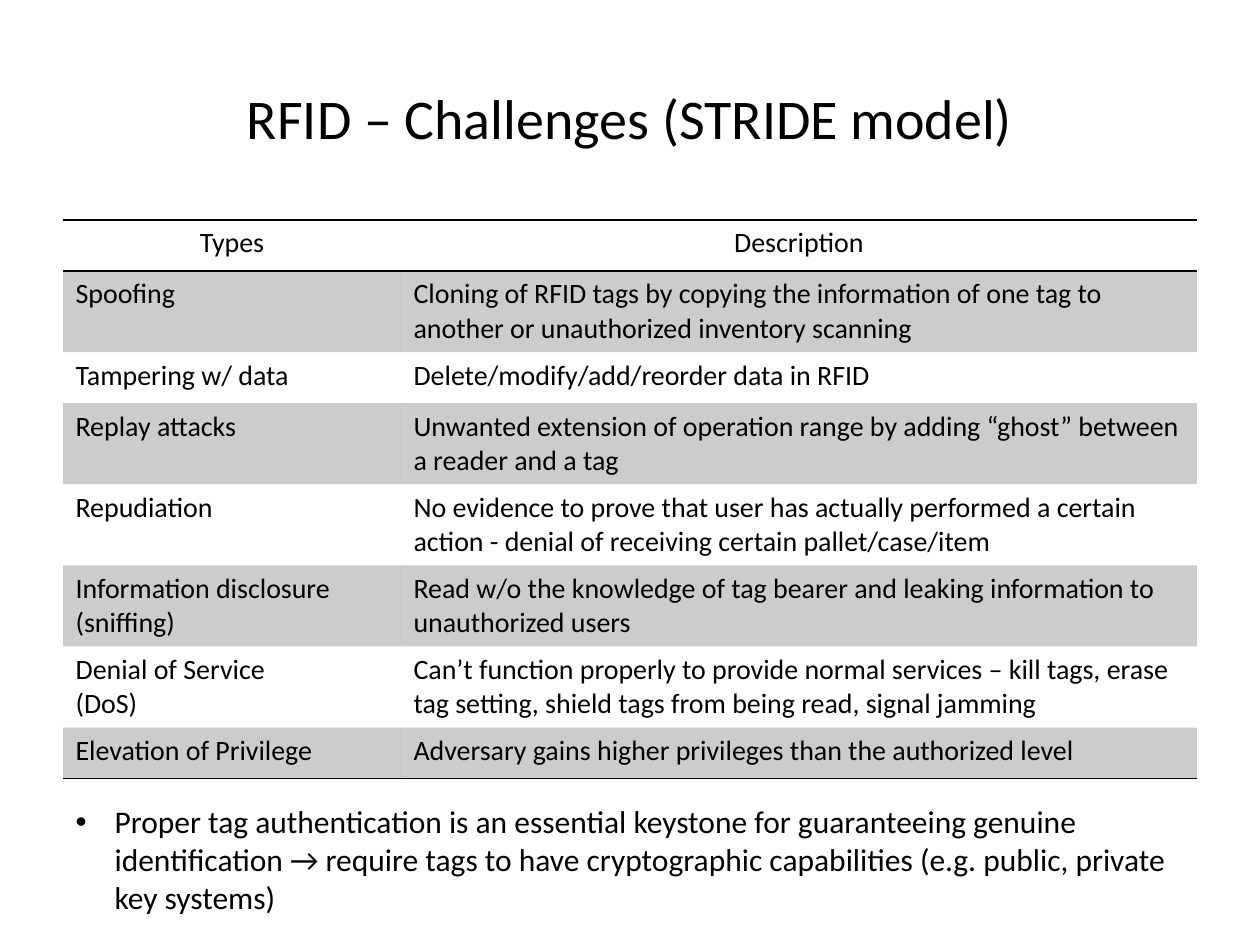
"""Build the RFID challenges slide with its STRIDE table."""
from lxml.etree import SubElement
from pptx import Presentation
from pptx.dml.color import RGBColor
from pptx.enum.text import MSO_ANCHOR, MSO_AUTO_SIZE, PP_ALIGN
from pptx.oxml.ns import qn
from pptx.util import Emu, Pt

PX = 914400 / 126
THEME = {
    "font": "Calibri", "ink": "000000", "band_alpha": 20, "rule": 1,
    "title": 32, "cell": 16, "body": 18,
    "table_style": "{2D5ABB26-0587-4C30-8999-92F81FD0307C}",
}
ROWS = [
    ("Types", "Description"),
    ("Spoofing", "Cloning of RFID tags by copying the information of one tag to "
     "another or unauthorized inventory scanning"),
    ("Tampering w/ data", "Delete/modify/add/reorder data in RFID"),
    ("Replay attacks", "Unwanted extension of operation range by adding “ghost” "
     "between a reader and a tag"),
    ("Repudiation", "No evidence to prove that user has actually performed a certain "
     "action - denial of receiving certain pallet/case/item"),
    ("Information disclosure\n(sniffing)", "Read w/o the knowledge of tag bearer and "
     "leaking information to unauthorized users"),
    ("Denial of Service\n(DoS)", "Can’t function properly to provide normal services – "
     "kill tags, erase tag setting, shield tags from being read, signal jamming"),
    ("Elevation of Privilege", "Adversary gains higher privileges than the authorized level"),
]


def px(n):
    return Emu(round(n * PX))


def write(tf, text, size, align=PP_ALIGN.LEFT, anchor=MSO_ANCHOR.TOP):
    tf.text = text
    tf.word_wrap = True
    tf.vertical_anchor = anchor
    for p in tf.paragraphs:
        p.alignment = align
        p.space_before = Pt(0)
        for r in p.runs:
            r.font.name = THEME["font"]
            r.font.size = Pt(size)
            r.font.color.rgb = RGBColor.from_string(THEME["ink"])


prs = Presentation()
prs.slide_width, prs.slide_height = px(1260), px(945)
s = prs.slides.add_slide(prs.slide_layouts[1])
title, body = s.placeholders

title.left, title.top, title.width, title.height = px(63), px(38), px(1134), px(158)
write(title.text_frame, "RFID – Challenges (STRIDE model)", THEME["title"],
      PP_ALIGN.CENTER, MSO_ANCHOR.MIDDLE)

row_h = 51
frame = s.shapes.add_table(len(ROWS), 2, px(63), px(220), px(1134), px(row_h * len(ROWS)))
tbl = frame.table
tbl.first_row = tbl.horz_banding = False
frame._element.find(".//" + qn("a:tableStyleId")).text = THEME["table_style"]
for col, width in zip(tbl.columns, (338, 796)):
    col.width = px(width)

for i, texts in enumerate(ROWS):
    tbl.rows[i].height = px(row_h)
    edges = {0: ("lnT", "lnB"), len(ROWS) - 1: ("lnB",)}.get(i, ())
    for cell, text in zip(tbl.rows[i].cells, texts):
        write(cell.text_frame, text, THEME["cell"],
              PP_ALIGN.LEFT if i else PP_ALIGN.CENTER)
        tcPr = cell._tc.get_or_add_tcPr()
        for edge in edges:
            ln = SubElement(tcPr, qn("a:" + edge), w=str(Pt(THEME["rule"])))
            fill = SubElement(ln, qn("a:solidFill"))
            SubElement(fill, qn("a:srgbClr"), val=THEME["ink"])
        if i % 2:
            cell.fill.solid()
            cell.fill.fore_color.rgb = RGBColor.from_string(THEME["ink"])
            clr = tcPr.find(qn("a:solidFill") + "/" + qn("a:srgbClr"))
            SubElement(clr, qn("a:alpha"), val=str(THEME["band_alpha"] * 1000))
        else:
            cell.fill.background()

body.left, body.top, body.width, body.height = px(63), px(796), px(1134), px(127)
tf = body.text_frame
write(tf, "Proper tag authentication is an essential keystone for guaranteeing genuine "
      "identification → require tags to have cryptographic capabilities "
      "(e.g. public, private key systems)", THEME["body"])
tf.auto_size = MSO_AUTO_SIZE.NONE
pPr = tf.paragraphs[0]._p.get_or_add_pPr()
pPr.set("marL", str(px(39)))
pPr.set("indent", str(px(-39)))

prs.save("out.pptx")
